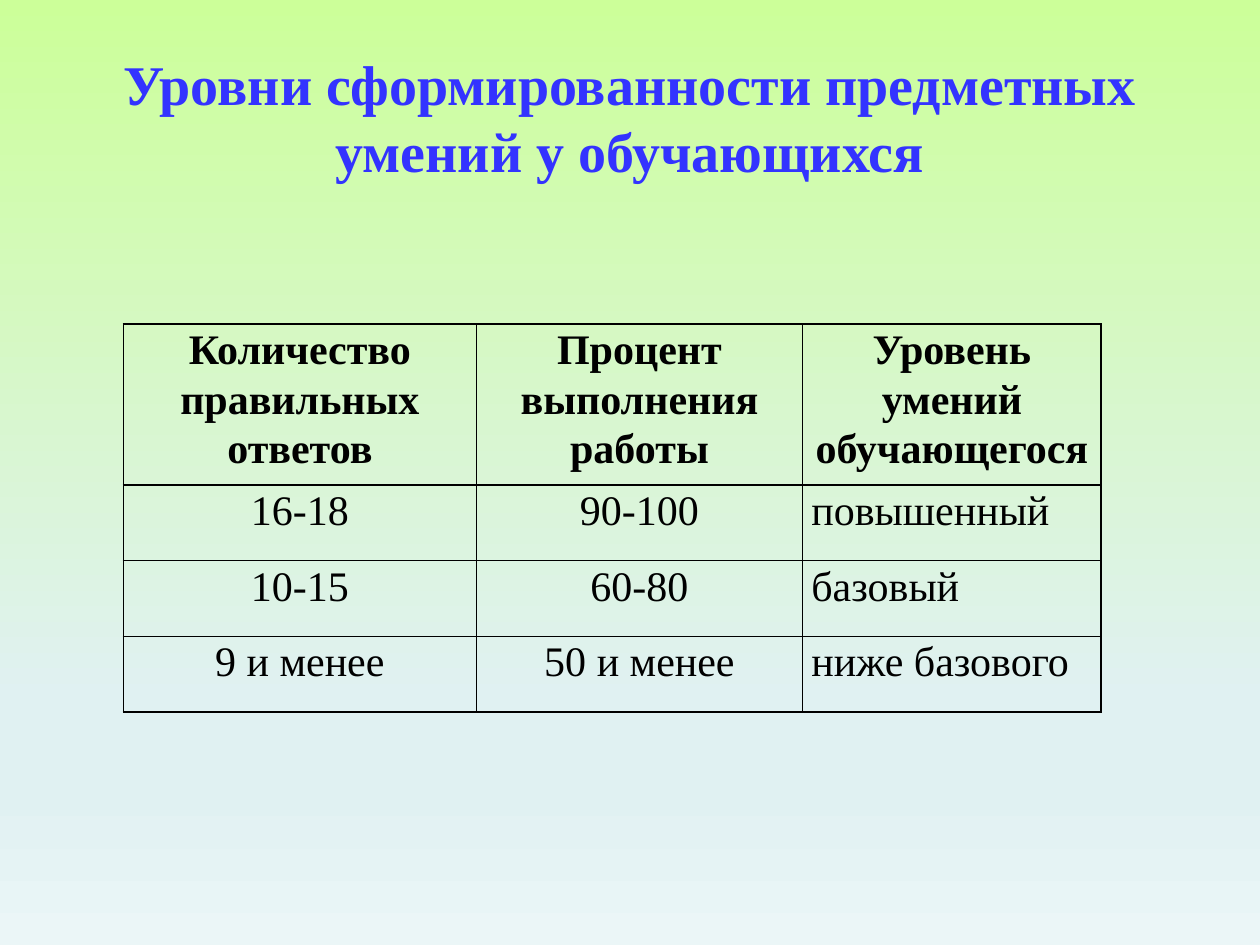
from lxml import etree
from pptx import Presentation, util as u
from pptx.dml.color import RGBColor
from pptx.enum import text
from pptx.oxml.ns import qn

HUES = {"title": "3333FF", "ink": "000000", "lime": "CCFF99",
        "mist": "E0F1F2", "pale": "EBF6F7"}
ROWS = [
    ["Количество правильных ответов", "Процент выполнения работы",
     "Уровень умений обучающегося"],
    ["16-18", "90-100", "повышенный"],
    ["10-15", "60-80", "базовый"],
    ["9 и менее", "50 и менее", "ниже базового"],
]
ALIGN = text.PP_ALIGN


class Deck:
    font = "Times New Roman"

    def __init__(self, wide, high):
        self.prs = Presentation()
        self.prs.slide_width, self.prs.slide_height = u.Inches(wide), u.Inches(high)
        self.slide = self.prs.slides.add_slide(self.prs.slide_layouts[5])

    def box(self, x, y, w, h):
        """Turn shares of the slide into lengths."""
        wide, high = self.prs.slide_width, self.prs.slide_height
        return [round(v) for v in (x * wide, y * high, w * wide, h * high)]

    def style(self, para, size, hue, bold, align):
        para.alignment = align
        for run in para.runs:
            font = run.font
            font.name, font.size, font.bold = self.font, u.Pt(size), bold
            font.color.rgb = RGBColor.from_string(HUES[hue])

    def back(self, stops):
        fill = self.slide.background.fill
        fill.gradient()
        fill.gradient_angle = 270
        items = next(self.slide.element.iter(qn("a:gsLst")))
        for old in list(items):
            items.remove(old)
        for pos, hue in stops:
            stop = etree.SubElement(items, qn("a:gs"), pos=str(pos * 1000))
            etree.SubElement(stop, qn("a:srgbClr"), val=HUES[hue])

    def title(self, words, *share):
        shape = self.slide.shapes.title
        shape.left, shape.top, shape.width, shape.height = self.box(*share)
        frame = shape.text_frame
        frame.text = words
        frame.word_wrap = True
        frame.auto_size = text.MSO_AUTO_SIZE.NONE
        frame.vertical_anchor = text.MSO_ANCHOR.MIDDLE
        self.style(frame.paragraphs[0], 32, "title", True, ALIGN.CENTER)

    def edge(self, cell):
        props = cell._tc.get_or_add_tcPr()
        for spot, side in enumerate(("lnL", "lnR", "lnT", "lnB")):
            line = etree.Element(qn("a:" + side), w=str(u.Pt(1)))
            fill = etree.SubElement(line, qn("a:solidFill"))
            etree.SubElement(fill, qn("a:srgbClr"), val=HUES["ink"])
            props.insert(spot, line)

    def cell(self, cell, words, head, last):
        cell.fill.background()
        cell.margin_left = cell.margin_right = u.Inches(0.07)
        cell.margin_top = cell.margin_bottom = 0
        cell.text = words
        para = cell.text_frame.paragraphs[0]
        para.line_spacing = 1.07
        para.space_after = u.Pt(0 if head or last else 8)
        align = ALIGN.JUSTIFY if last and not head else ALIGN.CENTER
        self.style(para, 24, "ink", head, align)
        self.edge(cell)

    def table(self, rows, cols, highs, x, y):
        spot = self.box(x, y, sum(cols), sum(highs))
        table = self.slide.shapes.add_table(len(rows), len(cols), *spot).table
        table.first_row = table.horz_banding = False
        for col, share in zip(table.columns, cols):
            col.width = round(share * self.prs.slide_width)
        for row, share in zip(table.rows, highs):
            row.height = round(share * self.prs.slide_height)
        for r, row in enumerate(rows):
            for c, words in enumerate(row):
                self.cell(table.cell(r, c), words, r == 0, c == len(cols) - 1)


def main():
    deck = Deck(10, 7.5)
    # Background
    deck.back([(0, "lime"), (74, "mist"), (83, "mist"), (100, "pale")])
    # Heading
    deck.title("Уровни сформированности предметных умений у обучающихся",
               0.05, 0.04, 0.9, 1 / 6)
    # Table of skill levels
    deck.table(ROWS, [0.28, 0.259, 0.237], [1.28 / 7.5] + [0.08] * 3,
               0.098, 2.57 / 7.5)
    deck.prs.save("out.pptx")


if __name__ == "__main__":
    main()
